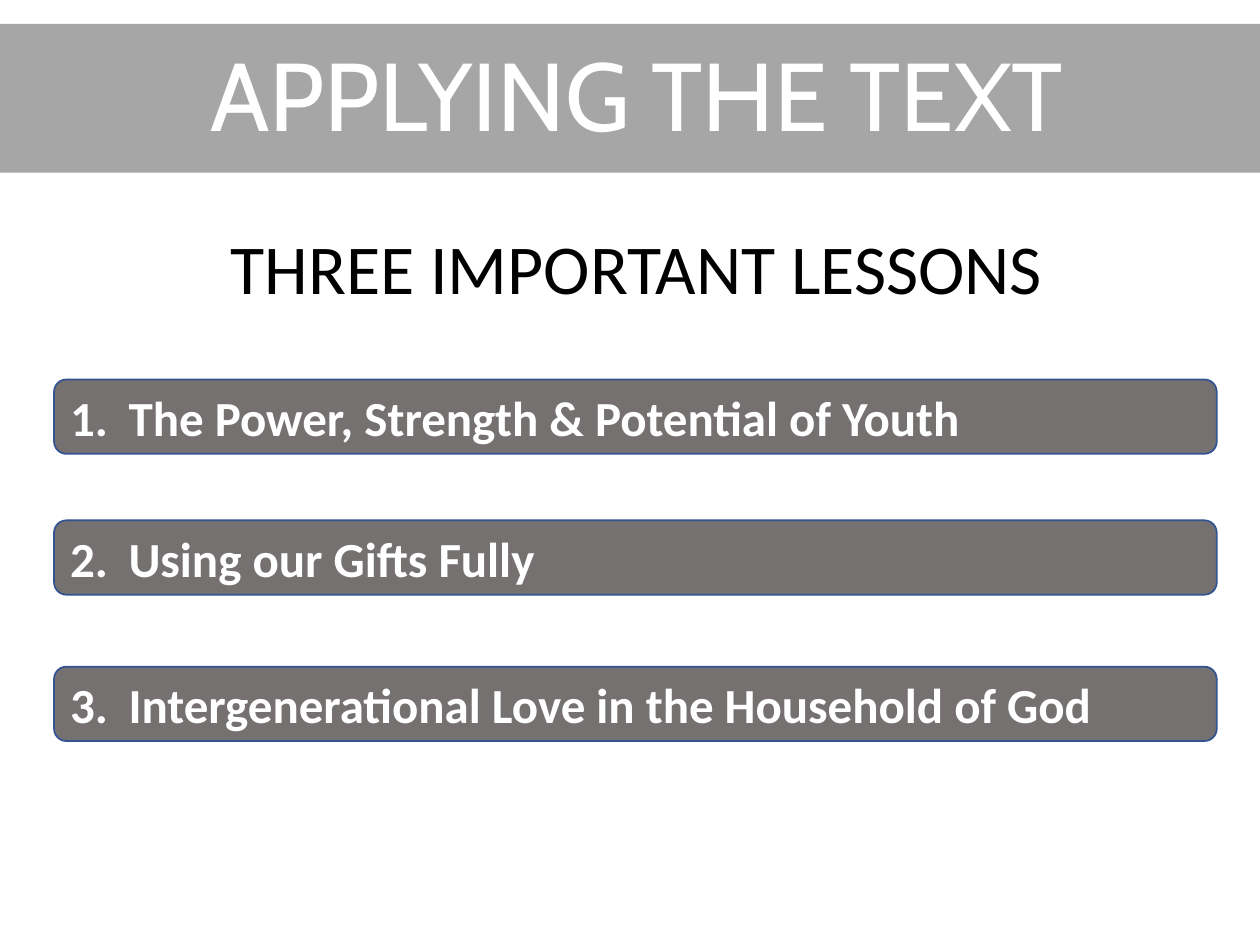
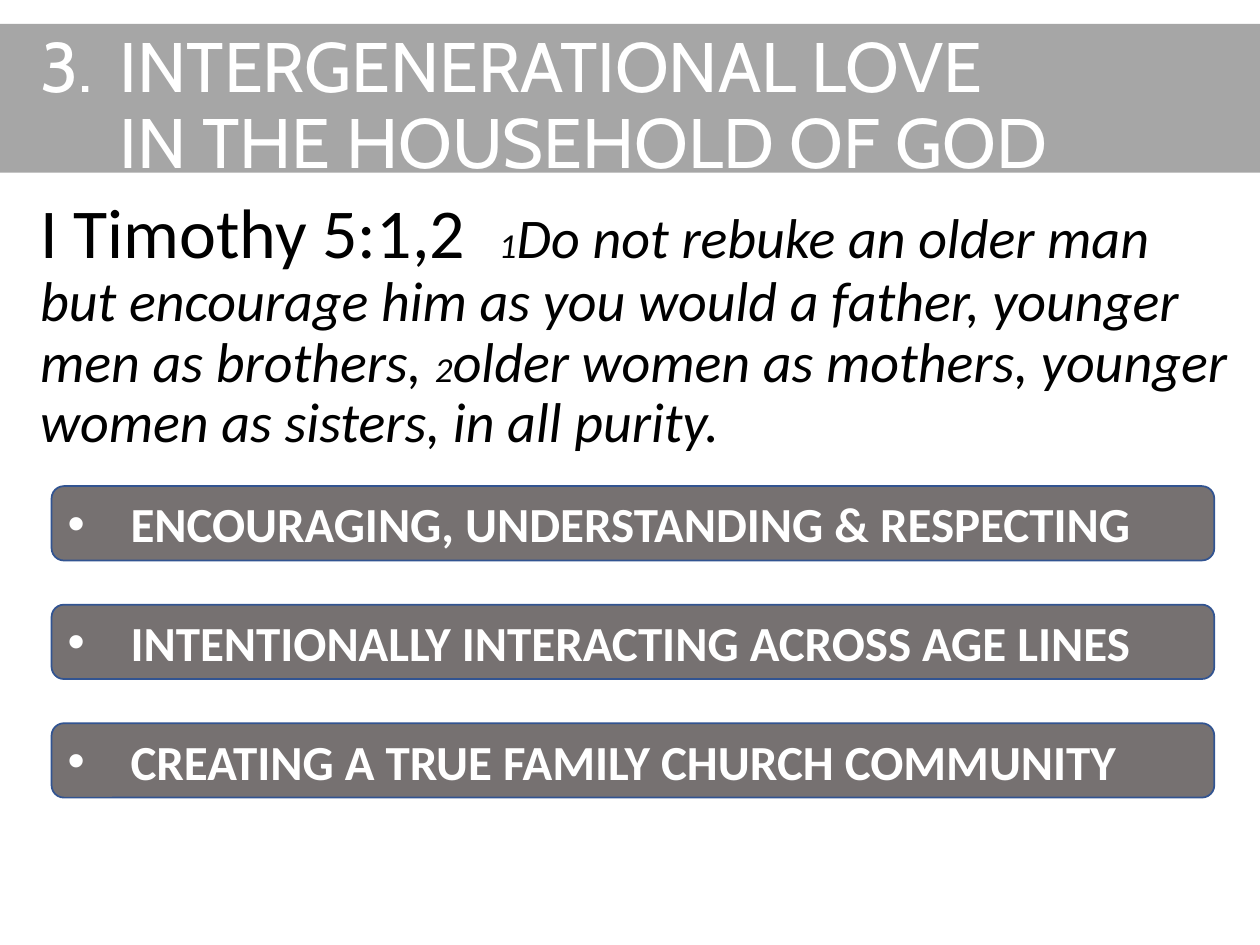
from copy import deepcopy
from dataclasses import dataclass
from typing import Optional

from lxml import etree
from pptx import Presentation
from pptx.dml.color import RGBColor
from pptx.enum import shapes, text
from pptx.oxml import ns
from pptx.util import Cm, Pt

WHITE = RGBColor(0xFF, 0xFF, 0xFF)
BLACK = RGBColor(0x00, 0x00, 0x00)
BAND_GREY = RGBColor(0xA6, 0xA6, 0xA6)
CARD_GREY = RGBColor(0x76, 0x71, 0x71)
CARD_EDGE = RGBColor(0x32, 0x54, 0x91)
TITLE_FONT, BODY_FONT = "Cabin", "Calibri"
LEFT, WIDTH = Cm(0.56), Cm(24.54)
CENTER = text.PP_ALIGN.CENTER
TITLE_ONLY = 5


@dataclass
class Card:
    text: str
    top: float


@dataclass
class CardStyle:
    left: float
    hang: float
    bullet: Optional[str] = None


LESSONS = [
    Card("1.\tThe Power, Strength & Potential of Youth", 7.65),
    Card("2.\tUsing our Gifts Fully", 10.49),
    Card("3.\tIntergenerational Love in the Household of God", 13.44),
]
LESSON_STYLE = CardStyle(left=1.09, hang=1.18)

PRACTICES = [
    Card(label, 9.8 + 2.39 * i)
    for i, label in enumerate([
        "ENCOURAGING, UNDERSTANDING & RESPECTING",
        "INTENTIONALLY INTERACTING ACROSS AGE LINES",
        "CREATING A TRUE FAMILY CHURCH COMMUNITY",
    ])
]
PRACTICE_STYLE = CardStyle(left=1.04, hang=1.27, bullet="•")


def write(p, content: str, size: float, font: str = BODY_FONT,
          color: RGBColor = BLACK, bold: bool = False, italic: bool = False) -> None:
    """Append formatted text to a paragraph; a newline becomes a line break."""
    for i, line in enumerate(content.split("\n")):
        if i:
            p.add_line_break()
            p._p[-1].append(deepcopy(r._r.rPr))
        r = p.add_run()
        r.text = line
        f = r.font
        f.name, f.size, f.bold, f.italic = font, Pt(size), bold, italic
        f.color.rgb = color


def set_hanging(p, hang: float) -> None:
    pPr = p._p.get_or_add_pPr()
    pPr.set("marL", str(Cm(hang)))
    pPr.set("indent", str(-Cm(hang)))


def add_to_ppr(p, tag: str, **attrs: str):
    return etree.SubElement(p._p.get_or_add_pPr(), ns.qn(tag), attrs)


def add_box(slide, kind, left, top, width, height, fill: RGBColor):
    sp = slide.shapes.add_shape(kind, left, top, width, height)
    sp.shadow.inherit = False
    sp.fill.solid()
    sp.fill.fore_color.rgb = fill
    sp.line.fill.background()
    return sp


def add_title(slide, content: str, top: float, height: float, size: float,
              align=None, hang: float = 0) -> None:
    sp = slide.shapes.title
    sp.left, sp.top, sp.width, sp.height = LEFT, Cm(top), WIDTH, Cm(height)
    tf = sp.text_frame
    tf.auto_size = text.MSO_AUTO_SIZE.NONE
    tf.vertical_anchor = text.MSO_ANCHOR.MIDDLE
    p = tf.paragraphs[0]
    p.alignment = align or text.PP_ALIGN.LEFT
    p.line_spacing = 0.9
    set_hanging(p, hang)
    write(p, content, size, TITLE_FONT, WHITE)


def add_body(slide, top: float, height: float, align=None):
    """Add the text box under the title and return its paragraph."""
    tf = slide.shapes.add_textbox(LEFT, Cm(top), WIDTH, Cm(height)).text_frame
    tf.word_wrap = True
    p = tf.paragraphs[0]
    p.alignment = align
    p.line_spacing = 0.9
    return p


def add_cards(slide, cards: list[Card], style: CardStyle) -> None:
    for card in cards:
        sp = add_box(slide, shapes.MSO_SHAPE.ROUNDED_RECTANGLE, Cm(style.left),
                     Cm(card.top), Cm(23.44), Cm(1.5), CARD_GREY)
        sp.line.color.rgb = CARD_EDGE
        sp.line.width = Pt(1)
        tf = sp.text_frame
        tf.word_wrap = True
        tf.vertical_anchor = text.MSO_ANCHOR.MIDDLE
        p = tf.paragraphs[0]
        p.alignment = text.PP_ALIGN.LEFT
        set_hanging(p, style.hang)
        if style.bullet:
            add_to_ppr(p, "a:buFont", typeface="Arial")
            add_to_ppr(p, "a:buChar", char=style.bullet)
        write(p, card.text, 28, color=WHITE, bold=True)


def move_to_layout(sp, layout) -> None:
    """Put a shape behind everything on the layout, so all its slides show it."""
    sp.element.nvSpPr.cNvPr.set("id", "20")
    layout.shapes.element.insert(2, sp.element)


def build_lessons(slide) -> None:
    add_title(slide, "APPLYING THE TEXT", 0.18, 3.68, 55, align=CENTER)
    p = add_body(slide, 4.6, 2.84, align=CENTER)
    write(p, "THREE IMPORTANT LESSONS", 40)
    add_cards(slide, LESSONS, LESSON_STYLE)


def build_love(slide) -> None:
    add_title(slide, "3.\tINTERGENERATIONAL LOVE\nIN THE HOUSEHOLD OF GOD",
              0.48, 3.38, 40, hang=1.6)
    p = add_body(slide, 3.86, 5.72)
    tabs = add_to_ppr(p, "a:tabLst")
    etree.SubElement(tabs, ns.qn("a:tab"), pos=str(Cm(9.25)), algn="l")
    write(p, "I Timothy 5:1,2\t", 40)
    write(p, "1", 20, italic=True)
    write(p, "Do not rebuke an older man but encourage him as you would a father, "
             "younger men as brothers, ", 32, italic=True)
    write(p, "2", 20, italic=True)
    write(p, "older women as mothers, younger women as sisters, in all purity.",
          32, italic=True)
    add_cards(slide, PRACTICES, PRACTICE_STYLE)


def main() -> None:
    prs = Presentation()
    prs.slide_width, prs.slide_height = Cm(25.4), Cm(19.05)
    layout = prs.slide_layouts[TITLE_ONLY]
    lessons, love = (prs.slides.add_slide(layout) for _ in range(2))
    band = add_box(lessons, shapes.MSO_SHAPE.RECTANGLE, 0, Cm(0.48),
                   prs.slide_width, Cm(3), BAND_GREY)
    move_to_layout(band, layout)
    build_lessons(lessons)
    build_love(love)
    prs.save("out.pptx")


if __name__ == "__main__":
    main()
